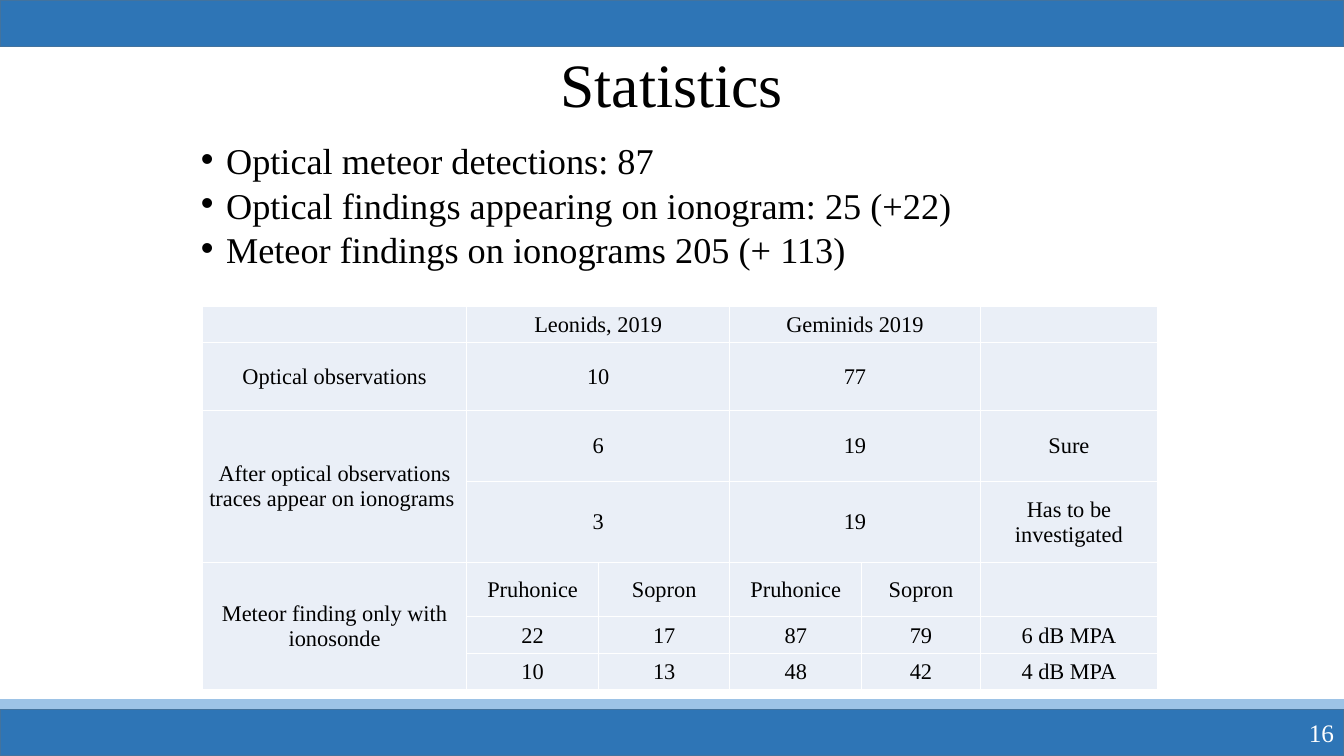
"""Build the meteor detection statistics slide with its bullets and table."""
from dataclasses import dataclass

from lxml.etree import SubElement
from pptx import Presentation
from pptx.dml.color import RGBColor
from pptx.enum.shapes import MSO_SHAPE
from pptx.enum.text import MSO_ANCHOR, MSO_AUTO_SIZE, PP_ALIGN
from pptx.oxml.ns import qn
from pptx.util import Pt

TITLE = "Statistics"
PAGE_NUMBER = "16"
FINDINGS = [
    "Optical meteor detections: 87",
    "Optical findings appearing on ionogram: 25 (+22)",
    "Meteor findings on ionograms 205 (+ 113)",
]
TABLE_ROWS = [
    ["", "Leonids, 2019", "", "Geminids 2019", "", ""],
    ["Optical observations", "10", "", "77", "", ""],
    ["After optical observations traces appear on ionograms ", "6", "", "19", "", "Sure"],
    ["", "3", "", "19", "", "Has to be investigated"],
    ["Meteor finding only with ionosonde", "Pruhonice", "Sopron", "Pruhonice", "Sopron", ""],
    ["", "22", "17", "87", "79", "6 dB MPA"],
    ["", "10", "13", "48", "42", "4 dB MPA"],
]
SHOWER_MERGES = [((row, col), (row, col + 1)) for row in range(4) for col in (1, 3)]
LABEL_MERGES = [((2, 0), (3, 0)), ((4, 0), (6, 0))]
COLUMN_WIDTHS = [188.6, 94.3, 93.7, 94.3, 84.6, 126.8]
ROW_HEIGHTS = [25.6, 48.4, 50.7, 58, 38.9, 26, 26]
PAGE_WIDTH, PAGE_HEIGHT, BAR_HEIGHT = 960, 540, 33.2


@dataclass(frozen=True)
class Theme:
    """Hold the font, colours and type sizes."""
    font: str = "Times New Roman"
    ink: str = "000000"
    white: str = "FFFFFF"
    bar: str = "2E75B6"
    bar_edge: str = "43739E"
    stripe: str = "9DC3E6"
    cell: str = "EAEFF7"
    title_size: float = 44
    body_size: float = 25.9
    number_size: float = 18
    table_size: float = 16


THEME = Theme()


def add_span(para, text, size, color=THEME.ink):
    """Add one formatted run to a paragraph."""
    span = para.add_run()
    span.text = text
    span.font.name = THEME.font
    span.font.size = Pt(size)
    span.font.bold = False
    span.font.color.rgb = RGBColor.from_string(color)


def place(shape, left, top, width, height):
    """Move and size a shape in points."""
    shape.left, shape.top = Pt(left), Pt(top)
    shape.width, shape.height = Pt(width), Pt(height)


def add_bar(page, top, fill, edge):
    """Draw a full-width bar."""
    bar = page.shapes.add_shape(
        MSO_SHAPE.RECTANGLE, 0, Pt(top), Pt(PAGE_WIDTH), Pt(BAR_HEIGHT))
    bar.shadow.inherit = False
    bar.fill.solid()
    bar.fill.fore_color.rgb = RGBColor.from_string(fill)
    bar.line.color.rgb = RGBColor.from_string(edge)
    bar.line.width = Pt(1)


def fill_title(title):
    """Place and write the title."""
    place(title, 66, 10, 828, 104.4)
    frame = title.text_frame
    frame.auto_size = MSO_AUTO_SIZE.NONE
    frame.vertical_anchor = MSO_ANCHOR.MIDDLE
    para = frame.paragraphs[0]
    para.alignment = PP_ALIGN.CENTER
    para.line_spacing = 0.9
    add_span(para, TITLE, THEME.title_size)


def fill_findings(body):
    """Place and write the bulleted findings."""
    place(body, 136.3, 103.7, 634, 98.6)
    frame = body.text_frame
    frame.auto_size = MSO_AUTO_SIZE.NONE
    frame.vertical_anchor = MSO_ANCHOR.TOP
    for index, finding in enumerate(FINDINGS):
        para = frame.add_paragraph() if index else frame.paragraphs[0]
        properties = para._p.get_or_add_pPr()
        properties.set("marL", str(Pt(18)))
        properties.set("indent", str(Pt(-18)))
        SubElement(properties, qn("a:buFont"), typeface="Arial")
        SubElement(properties, qn("a:buChar"), char="•")
        para.alignment = PP_ALIGN.LEFT
        para.line_spacing = 0.7
        para.space_before = Pt(10 if index else 0)
        add_span(para, finding, THEME.body_size)


def style_cell(cell, text):
    """Give a table cell its borders, fill and text."""
    properties = cell._tc.get_or_add_tcPr()
    for side in ("lnL", "lnR", "lnT", "lnB"):
        line = SubElement(properties, qn(f"a:{side}"), w=str(Pt(1)))
        SubElement(SubElement(line, qn("a:solidFill")), qn("a:srgbClr"), val=THEME.white)
    cell.fill.solid()
    cell.fill.fore_color.rgb = RGBColor.from_string(THEME.cell)
    cell.margin_left = cell.margin_right = cell.margin_top = Pt(0.7)
    cell.margin_bottom = 0
    cell.vertical_anchor = MSO_ANCHOR.MIDDLE
    para = cell.text_frame.paragraphs[0]
    para.alignment = PP_ALIGN.CENTER
    if text:
        add_span(para, text, THEME.table_size)


def add_counts_table(page):
    """Add the table of counts."""
    table = page.shapes.add_table(
        len(ROW_HEIGHTS), len(COLUMN_WIDTHS), Pt(144.7), Pt(219),
        Pt(sum(COLUMN_WIDTHS)), Pt(sum(ROW_HEIGHTS))).table
    table.first_row = table.horz_banding = False
    for column, width in zip(table.columns, COLUMN_WIDTHS):
        column.width = Pt(width)
    for row, height in zip(table.rows, ROW_HEIGHTS):
        row.height = Pt(height)
    for row, texts in zip(table.rows, TABLE_ROWS):
        for cell, text in zip(row.cells, texts):
            style_cell(cell, text)
    for first, last in SHOWER_MERGES + LABEL_MERGES:
        table.cell(*first).merge(table.cell(*last))


def add_page_number(page):
    """Write the page number in the bottom bar."""
    box = page.shapes.add_textbox(Pt(744), Pt(509), Pt(216), Pt(28.8))
    frame = box.text_frame
    frame.word_wrap = True
    frame.vertical_anchor = MSO_ANCHOR.MIDDLE
    para = frame.paragraphs[0]
    para.alignment = PP_ALIGN.RIGHT
    add_span(para, PAGE_NUMBER, THEME.number_size, THEME.white)


def main():
    """Assemble and save the deck."""
    deck = Presentation()
    deck.slide_width, deck.slide_height = Pt(PAGE_WIDTH), Pt(PAGE_HEIGHT)
    page = deck.slides.add_slide(deck.slide_layouts[1])
    bottom = PAGE_HEIGHT - BAR_HEIGHT
    add_bar(page, bottom - 7.2, THEME.stripe, THEME.stripe)
    for top in (bottom, 0):
        add_bar(page, top, THEME.bar, THEME.bar_edge)
    fill_title(page.shapes.title)
    fill_findings(page.placeholders[1])
    add_counts_table(page)
    add_page_number(page)
    deck.save("out.pptx")


if __name__ == "__main__":
    main()
